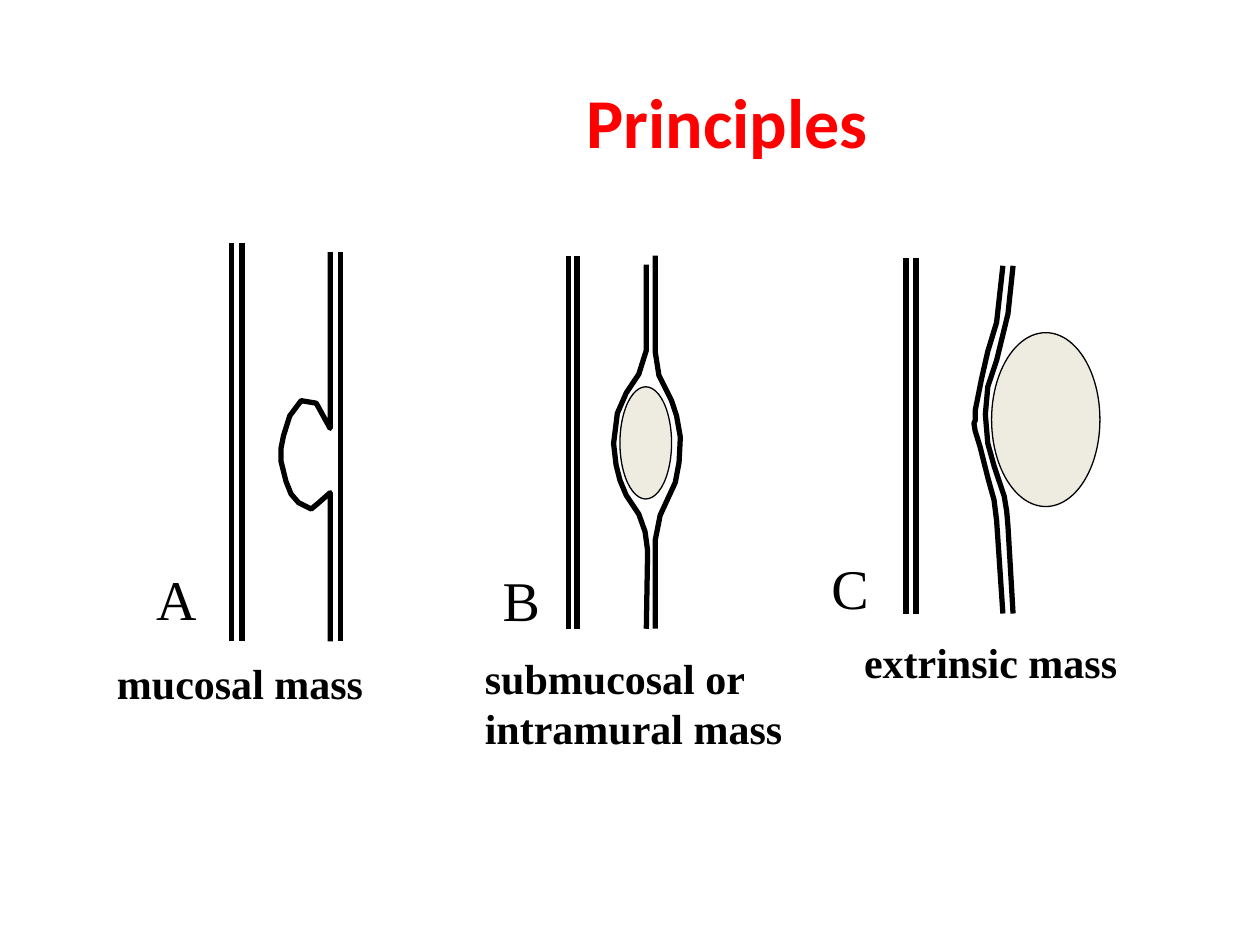
from dataclasses import dataclass

import lxml.etree
import pptx
import pptx.dml.color
import pptx.enum.shapes
import pptx.enum.text
import pptx.oxml.ns
import pptx.shapes.base
import pptx.shapes.shapetree
import pptx.util

Inches = pptx.util.Inches
Pt = pptx.util.Pt
Point = tuple[float, float]
Frame = tuple[float, float, float, float]

BLACK = pptx.dml.color.RGBColor(0x00, 0x00, 0x00)
RED = pptx.dml.color.RGBColor(0xFF, 0x00, 0x00)
MASS_FILL = pptx.dml.color.RGBColor(0xEE, 0xEC, 0xE1)
SERIF = "Times New Roman"
WALL_WIDTH = 3
MASS_LINE = 0.75


@dataclass
class Panel:
    """One kind of mass: vessel walls, the mass, a letter and a caption."""
    letter: str
    letter_frame: Frame
    caption: str
    caption_frame: Frame
    wall_xs: tuple[float, ...]
    wall_top: float
    wall_bottom: float
    outlines: list[list[Point]]
    mass_frame: Frame | None = None


PANELS = [
    Panel(
        "A", (1.14, 4.43, 0.52, 0.63), "mucosal mass", (0.83, 5.17, 2.33, 0.5),
        (1.84, 1.92), 1.93, 5.09,
        [
            [(2.62, 2), (2.62, 3.4), (2.51, 3.2), (2.39, 3.18), (2.3, 3.3),
             (2.25, 3.46), (2.23, 3.56), (2.23, 3.66), (2.27, 3.82),
             (2.31, 3.92), (2.37, 3.99), (2.47, 4.04), (2.53, 3.99),
             (2.62, 3.91), (2.62, 5.09)],
            [(2.7, 2), (2.7, 5.09)],
        ],
    ),
    Panel(
        "B", (3.89, 4.44, 0.5, 0.63),
        "submucosal or intramural mass", (3.75, 5.13, 2.83, 0.91),
        (4.51, 4.58), 2.03, 4.99,
        [
            [(5.13, 2.1), (5.13, 2.78), (5.07, 2.97), (4.97, 3.12),
             (4.9, 3.28), (4.87, 3.52), (4.89, 3.69), (4.92, 3.81),
             (4.97, 3.93), (5.07, 4.08), (5.12, 4.22), (5.14, 4.37),
             (5.13, 4.99)],
            [(5.2, 2.03), (5.2, 2.79), (5.23, 2.98), (5.33, 3.18),
             (5.37, 3.3), (5.4, 3.47), (5.39, 3.67), (5.36, 3.83),
             (5.24, 4.09), (5.2, 4.29), (5.2, 4.99)],
        ],
        (4.92, 3.07, 0.41, 0.89),
    ),
    Panel(
        "C", (6.5, 4.34, 0.5, 0.63), "extrinsic mass", (6.76, 5, 2.74, 0.5),
        (7.19, 7.27), 2.05, 4.87,
        [
            [(8.04, 2.11), (8, 2.49), (7.91, 2.86), (7.84, 3.07),
             (7.82, 3.29), (7.84, 3.52), (7.89, 3.7), (7.97, 3.94),
             (7.99, 4.06), (8, 4.18), (8.04, 4.87)],
            [(7.96, 2.11), (7.91, 2.56), (7.84, 2.79), (7.79, 3.01),
             (7.74, 3.26), (7.74, 3.34), (7.73, 3.36), (7.74, 3.42),
             (7.78, 3.55), (7.84, 3.79), (7.89, 3.97), (7.91, 4.13),
             (7.96, 4.87)],
        ],
        (7.87, 2.64, 0.86, 1.38),
    ),
]

Shapes = pptx.shapes.shapetree.GroupShapes


def add_wall(shapes: Shapes, start: Point, end: Point) -> None:
    wall = shapes.add_connector(
        pptx.enum.shapes.MSO_CONNECTOR.STRAIGHT,
        *(Inches(value) for value in start + end))
    wall.line.color.rgb = BLACK
    wall.line.width = Pt(WALL_WIDTH)
    properties = wall.element.spPr
    lxml.etree.SubElement(properties, pptx.oxml.ns.qn("a:effectLst"))


def add_curved_wall(shapes: Shapes, points: list[Point]) -> None:
    corners = [(Inches(x), Inches(y)) for x, y in points]
    builder = shapes.build_freeform(*corners[0], scale=1.0)
    builder.add_line_segments(corners[1:], close=False)
    outline = builder.convert_to_shape()
    outline.shadow.inherit = False
    outline.fill.background()
    outline.line.color.rgb = BLACK
    outline.line.width = Pt(WALL_WIDTH)


def add_mass(shapes: Shapes, frame: Frame) -> None:
    mass = shapes.add_shape(pptx.enum.shapes.MSO_SHAPE.OVAL,
                            *(Inches(value) for value in frame))
    mass.shadow.inherit = False
    mass.fill.solid()
    mass.fill.fore_color.rgb = MASS_FILL
    mass.line.color.rgb = BLACK
    mass.line.width = Pt(MASS_LINE)


def add_text(shapes: Shapes, text: str, frame: Frame, size: int,
             bold: bool, wrap: bool) -> None:
    box = shapes.add_textbox(*(Inches(value) for value in frame))
    box.text_frame.text = text
    box.text_frame.word_wrap = wrap
    box.text_frame.auto_size = pptx.enum.text.MSO_AUTO_SIZE.SHAPE_TO_FIT_TEXT
    font = box.text_frame.paragraphs[0].runs[0].font
    font.name = SERIF
    font.size = Pt(size)
    font.bold = bold
    font.color.rgb = BLACK


def add_panel(page: pptx.slide.Slide, panel: Panel) -> None:
    shapes = page.shapes.add_group_shape().shapes
    for x in panel.wall_xs:
        add_wall(shapes, (x, panel.wall_top), (x, panel.wall_bottom))
    for points in panel.outlines:
        if len(points) == 2:
            add_wall(shapes, *points)
        else:
            add_curved_wall(shapes, points)
    if panel.mass_frame:
        add_mass(shapes, panel.mass_frame)
    add_text(shapes, panel.caption, panel.caption_frame, 24, True, True)
    add_text(shapes, panel.letter, panel.letter_frame, 32, False, False)


def set_title(page: pptx.slide.Slide, text: str) -> None:
    title = page.shapes.title
    title.left, title.top = Inches(3.67), Inches(0.5)
    title.width, title.height = Inches(4.33), Inches(0.92)
    title.text_frame.text = text
    title.text_frame.vertical_anchor = pptx.enum.text.MSO_ANCHOR.MIDDLE
    para = title.text_frame.paragraphs[0]
    para.alignment = pptx.enum.text.PP_ALIGN.CENTER
    font = para.runs[0].font
    font.name = "Calibri"
    font.size = Pt(40)
    font.bold = True
    font.color.rgb = RED


def main() -> None:
    deck = pptx.Presentation()
    deck.slide_width, deck.slide_height = Inches(10), Inches(7.5)
    page = deck.slides.add_slide(deck.slide_layouts.get_by_name("Title Only"))

    # Three panels, then the heading
    for panel in PANELS:
        add_panel(page, panel)
    set_title(page, "Principles ")

    deck.save("out.pptx")


if __name__ == "__main__":
    main()
